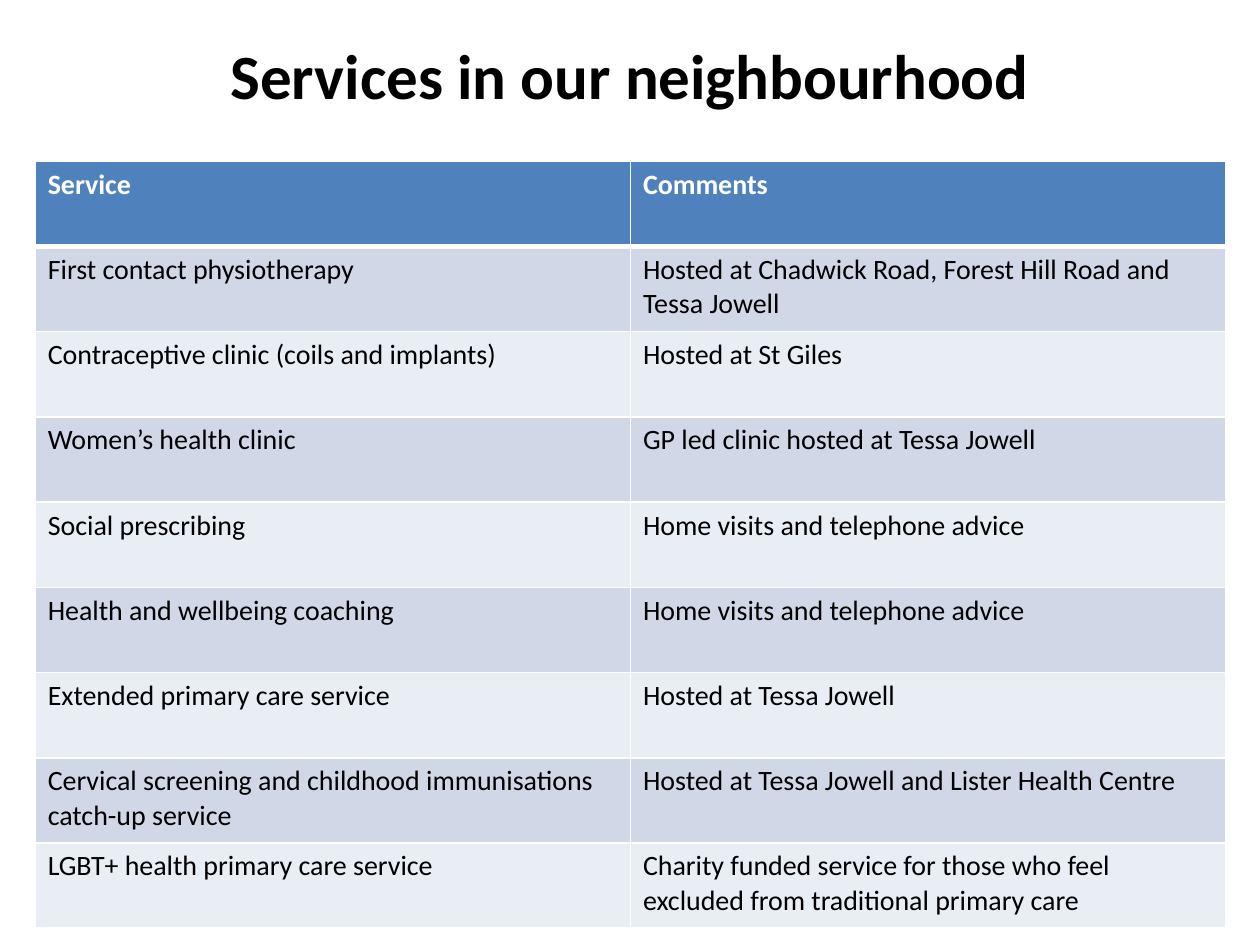
from lxml import etree
from pptx import Presentation
from pptx.dml.color import RGBColor
from pptx.enum.text import MSO_ANCHOR, PP_ALIGN
from pptx.oxml.ns import qn
from pptx.util import Cm, Pt

CENTER = PP_ALIGN.CENTER
MIDDLE = MSO_ANCHOR.MIDDLE
TITLE_ONLY = 5

COLORS = {
    "text": "000000",
    "white": "FFFFFF",
    "header": "4F81BD",
    "odd": "D0D8E8",
    "even": "E9EDF4",
}

ROWS = [
    ("Service", "Comments"),
    ("First contact physiotherapy",
     "Hosted at Chadwick Road, Forest Hill Road and Tessa Jowell"),
    ("Contraceptive clinic (coils and implants)", "Hosted at St Giles"),
    ("Women’s health clinic", "GP led clinic hosted at Tessa Jowell"),
    ("Social prescribing", "Home visits and telephone advice"),
    ("Health and wellbeing coaching", "Home visits and telephone advice"),
    ("Extended primary care service", "Hosted at Tessa Jowell"),
    ("Cervical screening and childhood immunisations catch-up service",
     "Hosted at Tessa Jowell and Lister Health Centre"),
    ("LGBT+ health primary care service",
     "Charity funded service for those who feel excluded from traditional primary care"),
]


def rgb(name):
    return RGBColor.from_string(COLORS[name])


class SlideBuilder:
    font = "Calibri"

    def __init__(self, slide):
        self.slide = slide

    def style(self, p, size, color, bold=False):
        for r in p.runs:
            r.font.name = self.font
            r.font.size = Pt(size)
            r.font.bold = bold
            r.font.color.rgb = rgb(color)

    def title(self, text, left, top, width, height):
        sp = self.slide.shapes.title
        sp.left, sp.top, sp.width, sp.height = left, top, width, height
        tf = sp.text_frame
        tf.text = text
        tf.vertical_anchor = MIDDLE
        p = tf.paragraphs[0]
        p.alignment = CENTER
        p.line_spacing = 1.5
        self.style(p, 36, "text", bold=True)

    def borders(self, cell, widths):
        tc_pr = cell._tc.get_or_add_tcPr()
        for side, width in widths.items():
            ln = etree.SubElement(tc_pr, qn(f"a:ln{side}"), w=str(Pt(width)))
            fill = etree.SubElement(ln, qn("a:solidFill"))
            etree.SubElement(fill, qn("a:srgbClr"), val=COLORS["white"])

    def table(self, rows, left, top, width, height):
        table = self.slide.shapes.add_table(
            len(rows), len(rows[0]), left, top, width, height).table
        for i, row in enumerate(rows):
            is_header = i == 0
            band = "header" if is_header else "odd" if i % 2 else "even"
            # A thicker rule separates the header from the body
            widths = {"L": 1, "R": 1, "T": 3 if i == 1 else 1, "B": 3 if is_header else 1}
            for j, text in enumerate(row):
                cell = table.cell(i, j)
                self.borders(cell, widths)
                cell.fill.solid()
                cell.fill.fore_color.rgb = rgb(band)
                cell.text_frame.text = text
                self.style(cell.text_frame.paragraphs[0], 16,
                           "white" if is_header else "text", bold=is_header)


def main():
    prs = Presentation()
    prs.slide_width, prs.slide_height = Cm(25.4), Cm(19.05)
    s = SlideBuilder(prs.slides.add_slide(prs.slide_layouts[TITLE_ONLY]))

    # Heading
    s.title("Services in our neighbourhood", Cm(1.27), Cm(-0.48), Cm(22.86), Cm(3.18))

    # Services and where they are hosted
    s.table(ROWS, Cm(0.71), Cm(3.25), Cm(24), Cm(15.47))

    prs.save("out.pptx")


if __name__ == "__main__":
    main()
